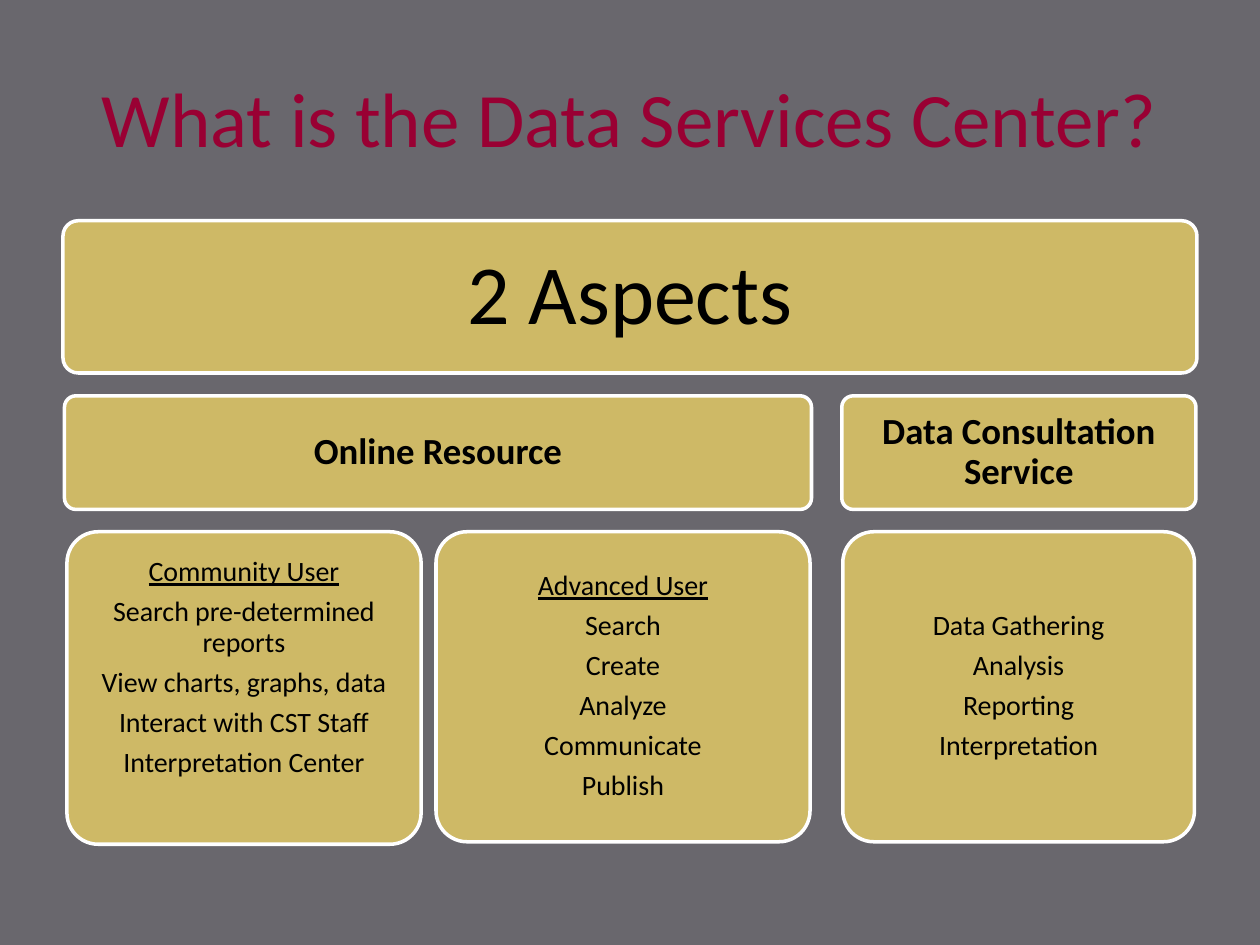
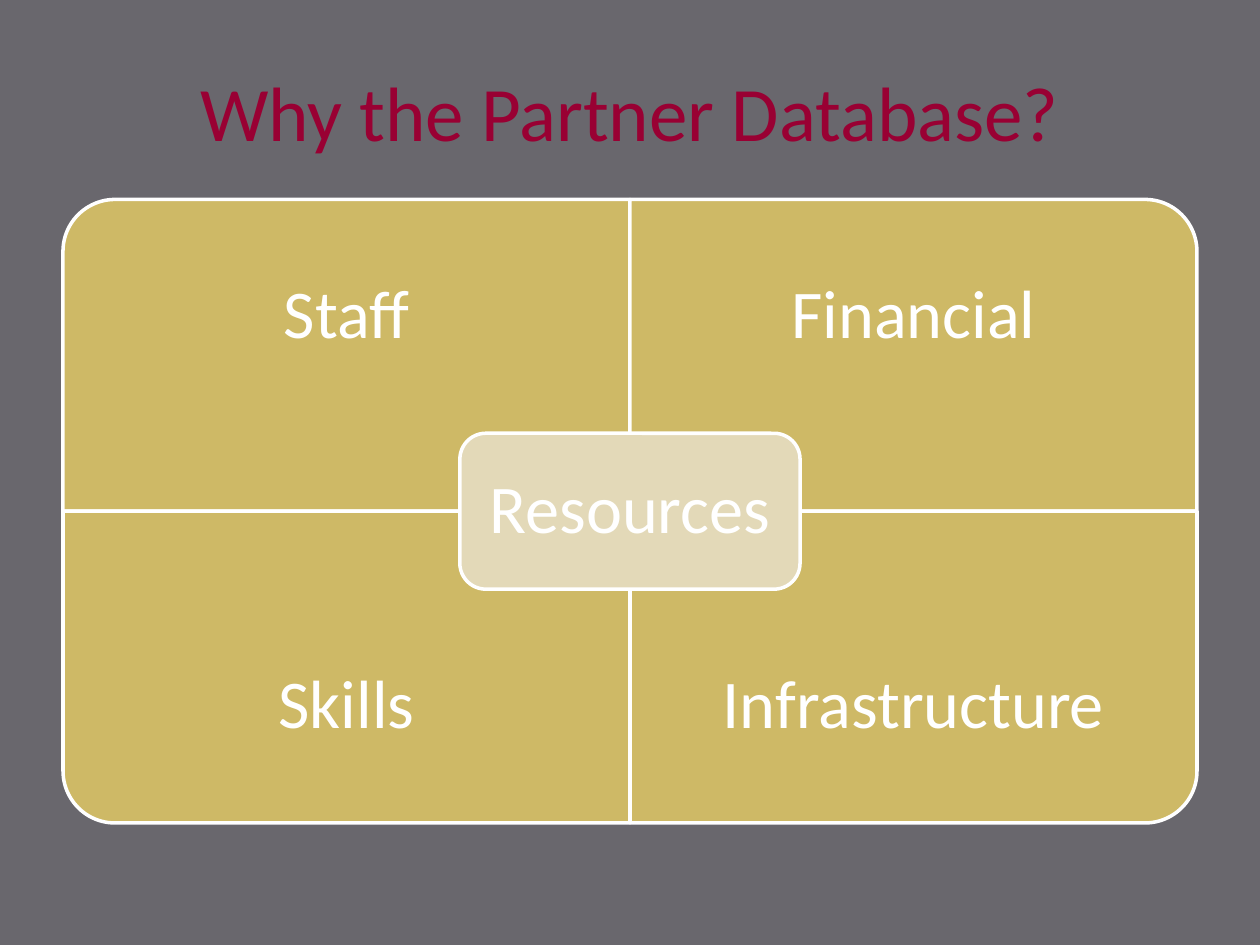
from collections import namedtuple

from pptx import Presentation
from pptx.dml.color import RGBColor
from pptx.enum.shapes import MSO_SHAPE
from pptx.enum.text import MSO_ANCHOR, PP_ALIGN
from pptx.util import Cm, Pt

COLORS = {
    "background": "69676D",
    "title": "990033",
    "gold": "CEB966",
    "pale gold": "E3D9B8",
    "outline": "FFFFFF",
    "dark text": "000000",
    "light text": "FFFFFF",
}
FONT = "Calibri"
TITLE_ONLY = 5

Box = namedtuple("Box", "left top width height")


def color(name):
    """Return the named colour of the palette."""
    return RGBColor.from_string(COLORS[name])


def place(shape, box):
    """Move and size a shape to a box given in centimetres."""
    shape.left, shape.top, shape.width, shape.height = (Cm(length) for length in box)


def write(shape, lines, size, ink, inset=0.25, extra_bottom=0, bold=False,
          underline_first=False, line_spacing=0.9, gap=0.35):
    """Write centred paragraphs into a shape, with gaps relative to the text size."""
    frame = shape.text_frame
    frame.word_wrap = True
    frame.vertical_anchor = MSO_ANCHOR.MIDDLE
    frame.margin_left = frame.margin_right = frame.margin_top = Cm(inset)
    frame.margin_bottom = Cm(inset + extra_bottom)
    for index, line in enumerate(lines):
        para = frame.add_paragraph() if index else frame.paragraphs[0]
        para.alignment = PP_ALIGN.CENTER
        para.line_spacing = line_spacing
        para.space_after = Pt(round(size * gap, 1))
        span = para.add_run()
        span.text = line
        span.font.name = FONT
        span.font.size = Pt(size)
        span.font.bold = bold
        span.font.underline = underline_first and index == 0
        span.font.color.rgb = color(ink)


def add_panel(page, kind, box, fill="gold", corner=None):
    """Add a filled shape with the shared white outline."""
    panel = page.shapes.add_shape(kind, *(Cm(length) for length in box))
    panel.shadow.inherit = False
    panel.fill.solid()
    panel.fill.fore_color.rgb = color(fill)
    panel.line.color.rgb = color("outline")
    panel.line.width = Pt(2)
    if corner is not None:
        panel.adjustments[0] = corner
    return panel


def add_titled_page(deck, title, top):
    """Add a title-only page and format its title."""
    page = deck.slides.add_slide(deck.slide_layouts[TITLE_ONLY])
    place(page.shapes.title, Box(1.27, top, 22.86, 3.18))
    write(page.shapes.title, [title], 44, "title", line_spacing=1, gap=0)
    return page


def add_hierarchy(page, box):
    """Draw the aspects banner, its two branches and their cards inside the box."""
    branch_top, card_top = 3.53, 6.27
    branch_height, card_height = 2.29, 6.25
    banner = Box(0, 0, box.width, 3.07)
    branches = [
        (Box(0.03, branch_top, 15.06, branch_height), "Online Resource"),
        (Box(15.7, branch_top, 7.14, branch_height), "Data Consultation Service"),
    ]
    cards = [
        (Box(0.08, card_top, 7.14, card_height + 0.05),
         ["Community User", "Search pre-determined reports", "View charts, graphs, data",
          "Interact with CST Staff", "Interpretation Center"],
         {"underline_first": True, "extra_bottom": 0.81}),
        (Box(7.52, card_top, 7.54, card_height),
         ["Advanced User", "Search", "Create", "Analyze", "Communicate", "Publish"],
         {"underline_first": True}),
        (Box(15.72, card_top, 7.09, card_height),
         ["Data Gathering", "Analysis", "Reporting", "Interpretation"], {}),
    ]
    nodes = [(banner, ["2 Aspects"], {"size": 48, "inset": 0.51})]
    nodes += [(area, [name], {"size": 21, "inset": 0.23, "bold": True})
              for area, name in branches]
    nodes += [(area, lines, {"size": 16, "inset": 0.18, **style})
              for area, lines, style in cards]
    for area, lines, style in nodes:
        spot = area._replace(left=box.left + area.left, top=box.top + area.top)
        panel = add_panel(page, MSO_SHAPE.ROUNDED_RECTANGLE, spot, corner=0.1)
        write(panel, lines, ink="dark text", **style)


def add_quadrant(page, box, name, turn, label_top):
    """Draw one quarter, its round corner turned outwards, with its label."""
    width, height = (box.height, box.width) if turn % 180 else (box.width, box.height)
    unturned = Box(box.left + (box.width - width) / 2,
                   box.top + (box.height - height) / 2, width, height)
    add_panel(page, MSO_SHAPE.ROUND_1_RECTANGLE, unturned).rotation = turn
    area = Box(box.left, label_top, box.width, box.height * 0.75)
    label = page.shapes.add_textbox(*(Cm(length) for length in area))
    write(label, [name], 39, "light text", inset=0.76)


def add_matrix(page, box):
    """Draw four quarters around a central panel inside the box."""
    width, height = box.width / 2, box.height / 2
    quarters = [("Staff", 270), ("Financial", 0), ("Skills", 180), ("Infrastructure", 90)]
    for index, (name, turn) in enumerate(quarters):
        row, column = divmod(index, 2)
        quarter = Box(box.left + column * width, box.top + row * height, width, height)
        add_quadrant(page, quarter, name, turn, quarter.top + row * height / 4)
    center_width, center_height = width * 0.6, height / 2
    center = Box(box.left + width - center_width / 2,
                 box.top + height - center_height / 2, center_width, center_height)
    panel = add_panel(page, MSO_SHAPE.ROUNDED_RECTANGLE, center, fill="pale gold")
    write(panel, ["Resources"], 39, "light text", inset=0.41)


def main():
    """Build and save the deck."""
    deck = Presentation()
    deck.slide_width, deck.slide_height = Cm(25.4), Cm(19.05)
    backdrop = deck.slide_master.background.fill
    backdrop.solid()
    backdrop.fore_color.rgb = color("background")

    page = add_titled_page(deck, "What is the Data Services Center?", 0.76)
    add_hierarchy(page, Box(1.27, 4.45, 22.86, 12.57))

    page = add_titled_page(deck, "Why the Partner Database?", 0.64)
    add_matrix(page, Box(1.27, 4.02, 22.86, 12.57))

    deck.save("out.pptx")


if __name__ == "__main__":
    main()
